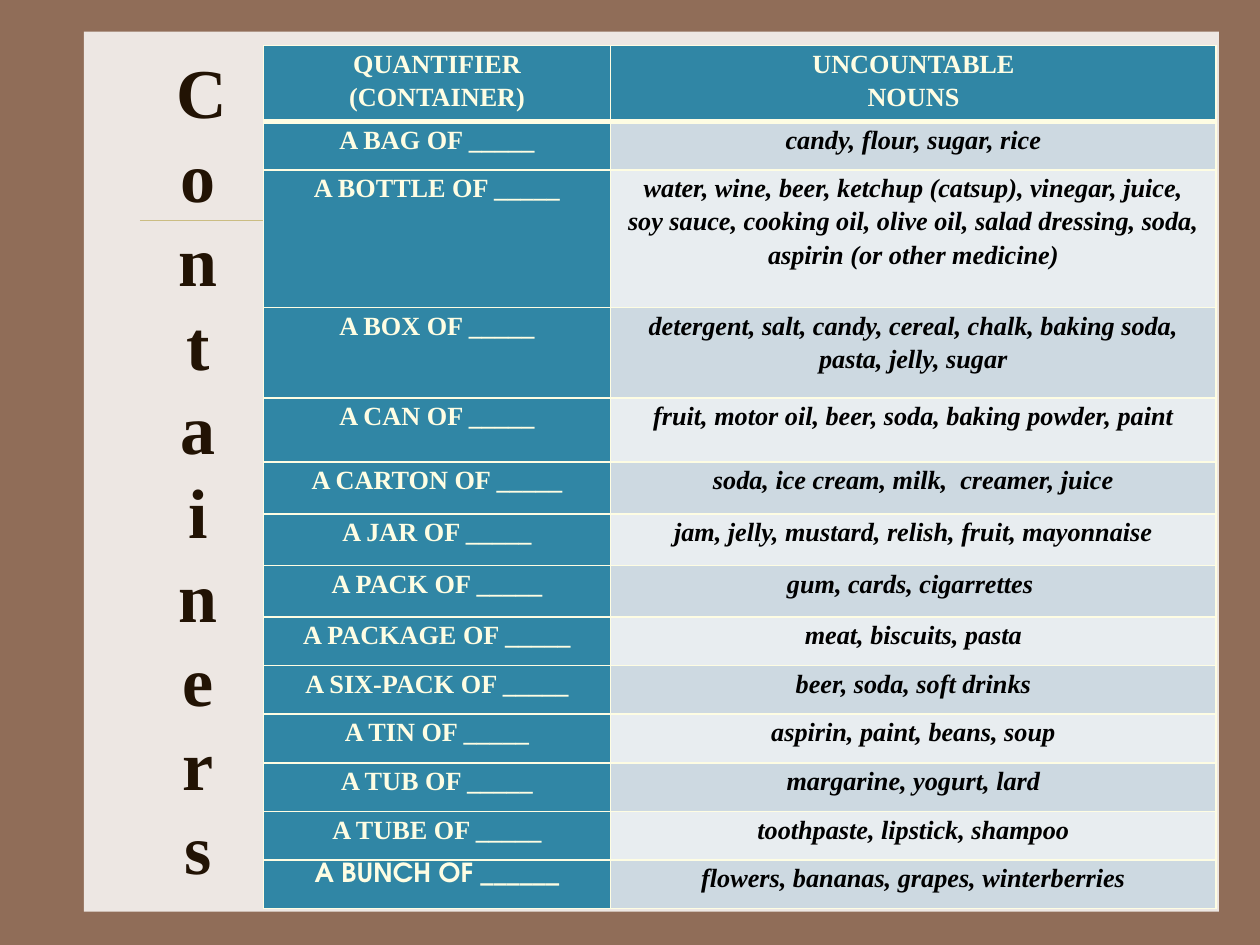
import copy

import pptx
import pptx.dml.color
import pptx.enum.shapes
import pptx.enum.text
import pptx.oxml
import pptx.oxml.ns
import pptx.util

Pt = pptx.util.Pt
CENTER = pptx.enum.text.PP_ALIGN.CENTER
SERIF = "Times New Roman"
SANS = "TeX Gyre Adventor"
COLORS = {
    "background": "906D58",
    "panel": "EDE7E3",
    "rule": "CBBD83",
    "title": "221304",
    "cream": "FEFDE3",
    "teal": "3086A5",
    "odd": "CDD9E1",
    "even": "E8EDF0",
    "black": "000000",
}
HEADINGS = ("QUANTIFIER\n(CONTAINER)", "UNCOUNTABLE\nNOUNS")
HEADING_HEIGHT = 43.4
CONTAINERS = [
    ("A BAG OF _____", "candy, flour, sugar, rice", 27.8),
    ("A BOTTLE OF _____",
     "water, wine, beer, ketchup (catsup), vinegar, juice,\v"
     "soy sauce, cooking oil, olive oil, salad dressing, soda,\v"
     "aspirin (or other medicine)", 78.6),
    ("A BOX OF _____",
     "detergent, salt, candy, cereal, chalk, baking soda,\vpasta, jelly, sugar", 51.6),
    ("A CAN OF _____", "fruit, motor oil, beer, soda, baking powder, paint", 36.8),
    ("A CARTON OF _____", "soda, ice cream, milk,  creamer, juice", 29.5),
    ("A JAR OF _____", "jam, jelly, mustard, relish, fruit, mayonnaise", 29.5),
    ("A PACK OF _____", "gum, cards, cigarrettes ", 29.5),
    ("A PACKAGE OF _____", "meat, biscuits, pasta", 27.8),
    ("A SIX-PACK OF _____", "beer, soda, soft drinks", 27.8),
    ("A TIN OF _____", "aspirin, paint, beans, soup", 27.8),
    ("A TUB OF _____", "margarine, yogurt, lard", 27.8),
    ("A TUBE OF _____", "toothpaste, lipstick, shampoo", 27.8),
    ("A BUNCH OF ______", "flowers, bananas, grapes, winterberries", 27.8),
]


def rgb(name):
    return pptx.dml.color.RGBColor.from_string(COLORS[name])


def format_text(frame, size, color, spacing, italic=False, typeface=SERIF):
    for paragraph in frame.paragraphs:
        paragraph.alignment = CENTER
        paragraph.line_spacing = spacing
        for run in paragraph.runs:
            run.font.name = typeface
            run.font.size = Pt(size)
            run.font.bold = True
            run.font.italic = italic
            run.font.color.rgb = rgb(color)
        for line_break in paragraph._p.findall(pptx.oxml.ns.qn("a:br")):
            line_break.append(copy.deepcopy(paragraph.runs[0].font._element))


def set_borders(cell, bottom=1, top=1):
    properties = cell._tc.get_or_add_tcPr()
    sides = (("lnL", 1), ("lnR", 1), ("lnT", top), ("lnB", bottom))
    for position, (side, width) in enumerate(sides):
        properties.insert(position, pptx.oxml.parse_xml(
            f'<a:{side} {pptx.oxml.ns.nsdecls("a")} w="{Pt(width)}"><a:solidFill>'
            f'<a:srgbClr val="{COLORS["cream"]}"/></a:solidFill></a:{side}>'))


def fill_cell(cell, text, fill, color, italic=False, typeface=SERIF, bottom=1, top=1):
    cell.margin_left = cell.margin_right = cell.margin_top = cell.margin_bottom = 0
    cell.fill.solid()
    cell.fill.fore_color.rgb = rgb(fill)
    set_borders(cell, bottom, top)
    cell.text_frame.text = text
    format_text(cell.text_frame, 15, color, 1.15, italic, typeface)


def add_backdrop(slide, left, top, width, height):
    slide.background.fill.solid()
    slide.background.fill.fore_color.rgb = rgb("background")
    panel = slide.shapes.add_shape(
        pptx.enum.shapes.MSO_SHAPE.RECTANGLE, Pt(left), Pt(top), Pt(width), Pt(height))
    panel.shadow.inherit = False
    panel.fill.solid()
    panel.fill.fore_color.rgb = rgb("panel")
    panel.line.fill.background()
    rule_top = Pt(top + 108)
    rule = slide.shapes.add_connector(
        pptx.enum.shapes.MSO_CONNECTOR.STRAIGHT,
        Pt(left + 32), rule_top, Pt(left + width - 13), rule_top)
    rule.line.color.rgb = rgb("rule")
    rule.line.width = Pt(0.25)
    rule._element.spPr.append(
        pptx.oxml.parse_xml(f'<a:effectLst {pptx.oxml.ns.nsdecls("a")}/>'))


def place_title(slide, left, top, width, height):
    title = slide.shapes.title
    slide.shapes._spTree.append(title._element)
    title.left, title.top, title.width, title.height = map(Pt, (left, top, width, height))
    frame = title.text_frame
    frame.text = "Containers"
    frame.word_wrap = True
    frame.auto_size = pptx.enum.text.MSO_AUTO_SIZE.NONE
    frame.vertical_anchor = pptx.enum.text.MSO_ANCHOR.MIDDLE
    format_text(frame, 40, "title", 1.0)


def add_container_table(slide, left, top, width, height):
    table = slide.shapes.add_table(
        len(CONTAINERS) + 1, 2, Pt(left), Pt(top), Pt(width), Pt(height)).table
    quantifier_width = 198.5
    table.columns[0].width = Pt(quantifier_width)
    table.columns[1].width = Pt(width - quantifier_width)
    table.rows[0].height = Pt(HEADING_HEIGHT)
    for column, heading in enumerate(HEADINGS):
        fill_cell(table.cell(0, column), heading, "teal", "cream", bottom=3)
    for row, (quantifier, nouns, row_height) in enumerate(CONTAINERS, 1):
        table.rows[row].height = Pt(row_height)
        top_border = 3 if row == 1 else 1
        typeface = SANS if row == len(CONTAINERS) else SERIF
        fill_cell(table.cell(row, 0), quantifier, "teal", "cream",
                  typeface=typeface, top=top_border)
        fill_cell(table.cell(row, 1), nouns, "odd" if row % 2 else "even", "black",
                  italic=True, top=top_border)


def main():
    presentation = pptx.Presentation()
    presentation.slide_width, presentation.slide_height = Pt(720), Pt(540)
    slide = presentation.slides.add_slide(presentation.slide_layouts[5])
    add_backdrop(slide, 48, 18, 648.5, 503)
    place_title(slide, 93.5, 21, 39.5, 493)
    add_container_table(slide, 150.5, 26, 544.5, 493.5)
    presentation.save("out.pptx")


if __name__ == "__main__":
    main()
